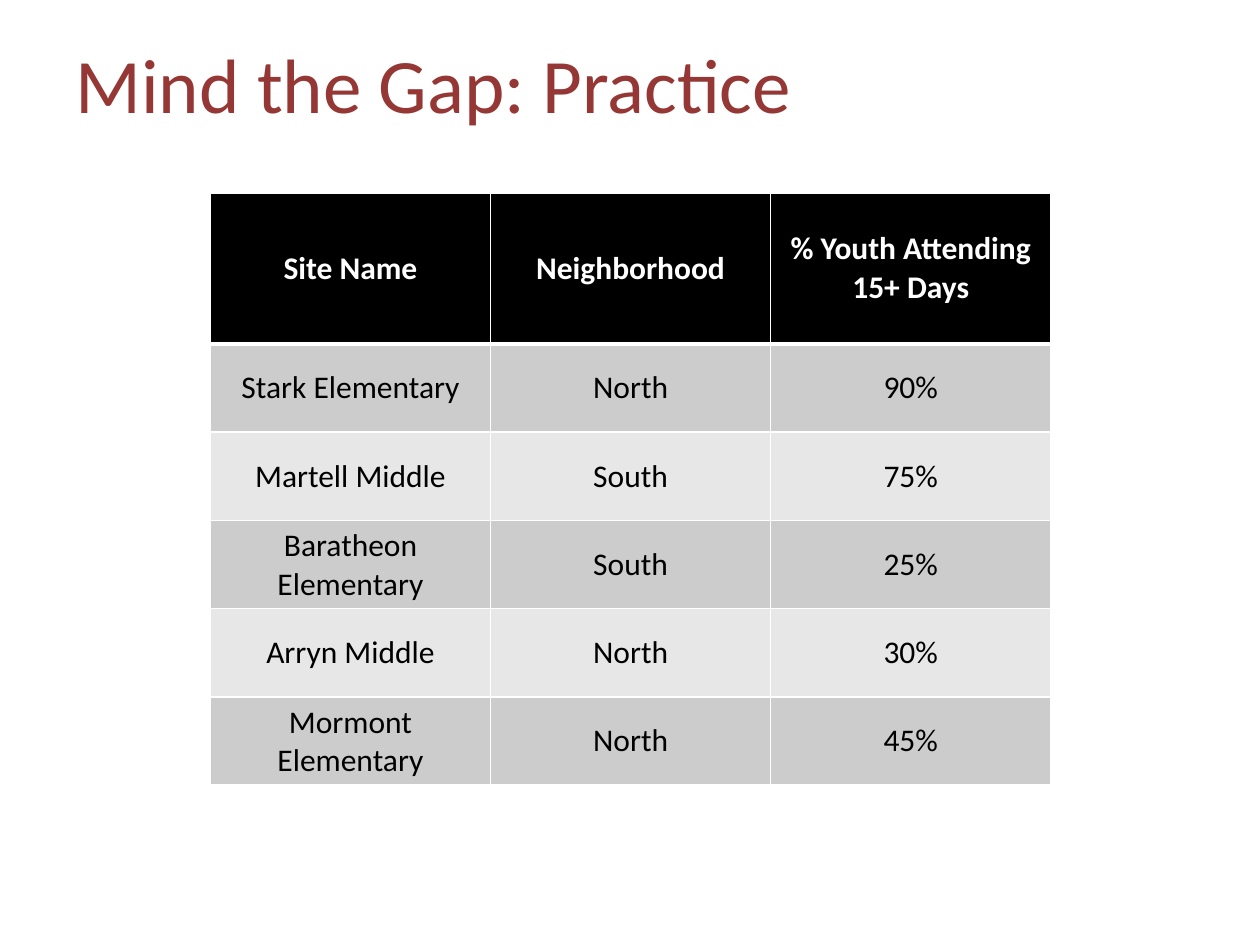
"""Build a slide with a table of youth attendance by site."""
from lxml.etree import SubElement
from pptx import Presentation
from pptx.dml.color import RGBColor
from pptx.enum.text import MSO_ANCHOR, PP_ALIGN
from pptx.oxml.ns import qn
from pptx.util import Inches, Pt

TITLE = "Mind the Gap: Practice"
ROWS = [
    ("Site Name", "Neighborhood", "% Youth Attending 15+ Days"),
    ("Stark Elementary", "North", "90%"),
    ("Martell Middle", "South", "75%"),
    ("Baratheon Elementary", "South", "25%"),
    ("Arryn Middle", "North", "30%"),
    ("Mormont Elementary", "North", "45%"),
]
COLORS = {
    "title": "953735",
    "head": "000000",
    "odd": "CCCCCC",
    "even": "E7E7E7",
    "text": "000000",
    "white": "FFFFFF",
}
FONT = "Calibri"
LEFT, TOP, WIDTH = 1.67, 1.53, 6.67
HEAD, BODY = 1.2, 0.7


def style(para, size, color, bold=False):
    for run in para.runs:
        font = run.font
        font.name, font.size, font.bold = FONT, Pt(size), bold
        font.color.rgb = RGBColor.from_string(COLORS[color])


def border(cell, side, width):
    props = cell._tc.get_or_add_tcPr()
    line = SubElement(props, qn(f"a:ln{side}"), w=str(Pt(width)))
    fill = SubElement(line, qn("a:solidFill"))
    SubElement(fill, qn("a:srgbClr"), val=COLORS["white"])


def add_title(slide):
    box = slide.shapes.add_textbox(Inches(0.5), Inches(0.3), Inches(9), Inches(0.72))
    frame = box.text_frame
    frame.word_wrap = True
    frame.vertical_anchor = MSO_ANCHOR.MIDDLE
    frame.text = TITLE
    style(frame.paragraphs[0], 44, "title")


def fill_cell(cell, text, row):
    cell.text = text
    cell.vertical_anchor = MSO_ANCHOR.MIDDLE
    para = cell.text_frame.paragraphs[0]
    para.alignment = PP_ALIGN.CENTER
    style(para, 18, "text" if row else "white", bold=row == 0)
    widths = {"L": 1, "R": 1, "T": 3 if row == 1 else 1, "B": 1 if row else 3}
    for side, width in widths.items():
        border(cell, side, width)
    shade = "head" if row == 0 else "odd" if row % 2 else "even"
    cell.fill.solid()
    cell.fill.fore_color.rgb = RGBColor.from_string(COLORS[shade])


def add_grid(slide):
    count = len(ROWS)
    height = HEAD + BODY * (count - 1)
    table = slide.shapes.add_table(
        count, len(ROWS[0]), Inches(LEFT), Inches(TOP), Inches(WIDTH), Inches(height)
    ).table
    for row, texts in enumerate(ROWS):
        table.rows[row].height = Inches(BODY if row else HEAD)
        for col, text in enumerate(texts):
            fill_cell(table.cell(row, col), text, row)


def main():
    deck = Presentation()
    deck.slide_width, deck.slide_height = Inches(10), Inches(7.5)
    slide = deck.slides.add_slide(deck.slide_layouts[6])
    add_title(slide)
    add_grid(slide)
    deck.save("out.pptx")


if __name__ == "__main__":
    main()
